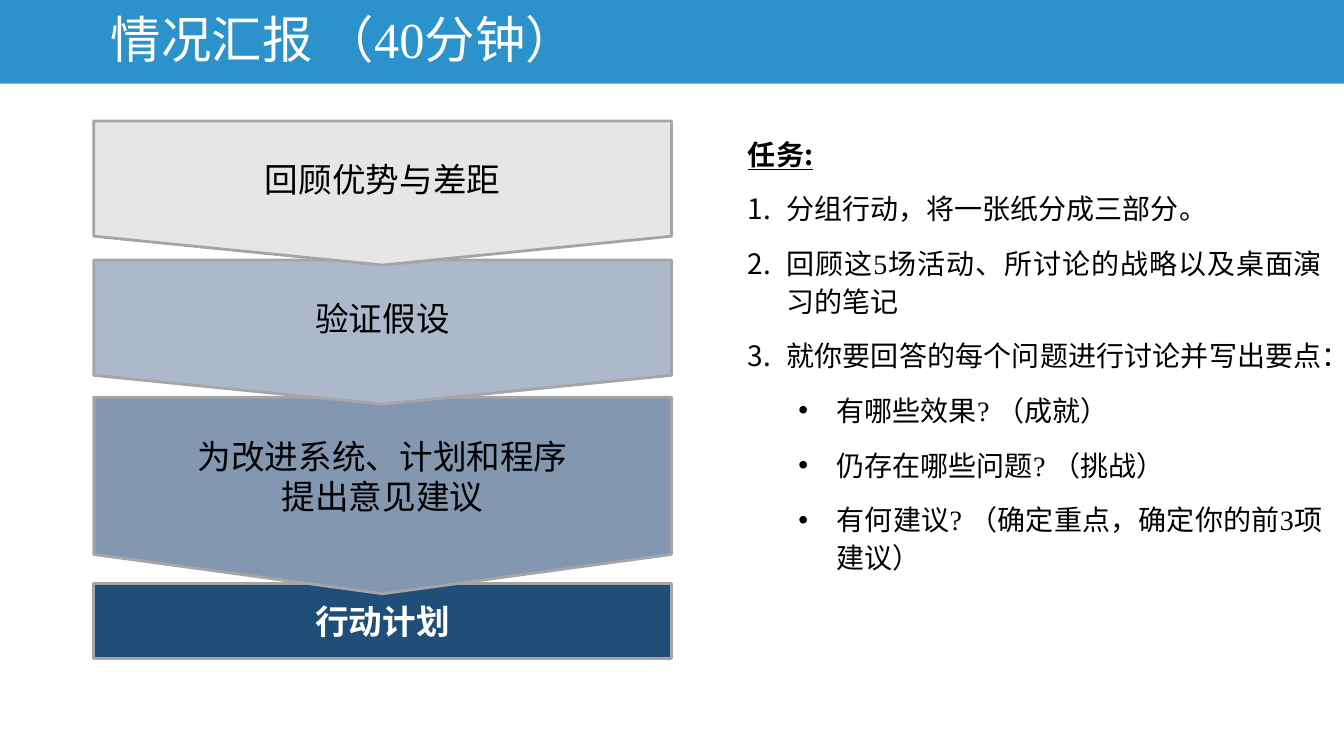
from lxml import etree
from pptx import Presentation
from pptx import util as u
from pptx.dml.color import RGBColor
from pptx.enum import shapes, text
from pptx.oxml import ns

COLORS = {
    "banner": "2B92CB", "outline": "A5A5A5", "white": "FFFFFF", "black": "000000",
    "review": "E7E6E6", "validate": "ADB9CA", "improve": "8497B0", "plan": "1F4E79",
}
SANS, SERIF = "Noto Sans CJK SC", "Times New Roman"
ALIGN = text.PP_ALIGN


def write(para, words, size=20, font=SERIF, color="black", bold=False,
          underline=False, align=ALIGN.LEFT, spacing=None, after=None):
    para.text = words
    para.alignment = align
    para.line_spacing = spacing
    para.space_after = after
    for span in para.runs:
        span.font.size = u.Pt(size)
        span.font.name = font
        span.font.bold = bold
        span.font.underline = underline
        span.font.color.rgb = RGBColor.from_string(COLORS[color])
        east_asian = etree.SubElement(span.font._element, ns.qn("a:ea"))
        east_asian.set("typeface", SANS)


def add_block(parent, kind, left, top, width, height, fill):
    block = parent.add_shape(kind, u.Inches(left), u.Inches(top),
                             u.Inches(width), u.Inches(height))
    block.shadow.inherit = False
    block.fill.solid()
    block.fill.fore_color.rgb = RGBColor.from_string(COLORS[fill])
    block.text_frame.word_wrap = True
    block.text_frame.vertical_anchor = text.MSO_ANCHOR.MIDDLE
    return block


deck = Presentation()
deck.slide_width, deck.slide_height = u.Inches(13.33), u.Inches(7.5)
page = deck.slides.add_slide(deck.slide_layouts[6])

# Steps, stacked from the bottom so that each arrow overlaps the next step
RECT = shapes.MSO_SHAPE.RECTANGLE
ARROW = shapes.MSO_SHAPE.FLOWCHART_OFFPAGE_CONNECTOR
steps = [
    (RECT, 5.79, 0.74, "plan", "行动计划", dict(font=SANS, color="white", bold=True)),
    (ARROW, 3.94, 1.95, "improve", "为改进系统、计划和程序\v提出意见建议", {}),
    (ARROW, 2.58, 1.43, "validate", "验证假设", {}),
    (ARROW, 1.2, 1.43, "review", "回顾优势与差距", {}),
]
stack = page.shapes.add_group_shape()
for kind, top, height, fill, words, style in steps:
    step = add_block(stack.shapes, kind, 0.93, top, 5.73, height, fill)
    step.line.color.rgb = RGBColor.from_string(COLORS["outline"])
    step.line.width = u.Pt(2)
    write(step.text_frame.paragraphs[0], words, size=24, align=ALIGN.CENTER, **style)

# Title banner
banner = add_block(page.shapes, RECT, 0, 0, 13.33, 0.83, "banner")
banner.line.fill.background()
banner.text_frame.margin_left = u.Inches(1.1)
write(banner.text_frame.paragraphs[0], "情况汇报 （40分钟）", size=36, color="white",
      spacing=0.9)

# Tasks: list level, wording (None is the heading)
tasks = [
    (None, "任务:"),
    (0, "分组行动，将一张纸分成三部分。"),
    (0, "回顾这5场活动、所讨论的战略以及桌面演习的笔记"),
    (0, "就你要回答的每个问题进行讨论并写出要点："),
    (1, "有哪些效果? （成就）"),
    (1, "仍存在哪些问题? （挑战）"),
    (1, "有何建议? （确定重点，确定你的前3项建议）"),
]
markers = [(SANS, "a:buAutoNum", "type", "arabicPeriod"),
           ("Arial", "a:buChar", "char", "•")]
box = page.shapes.add_textbox(u.Inches(7.32), u.Inches(1.27), u.Inches(5.89), u.Inches(5.34))
box.text_frame.word_wrap = True
for index, (level, words) in enumerate(tasks):
    para = box.text_frame.add_paragraph() if index else box.text_frame.paragraphs[0]
    heading = level is None
    write(para, words, font=SANS if heading else SERIF, bold=heading, underline=heading,
          align=ALIGN.JUSTIFY, spacing=u.Pt(27), after=u.Pt(12))
    if heading:
        continue
    para.level = level
    font, tag, key, value = markers[level]
    props = para._p.get_or_add_pPr()
    props.set("marL", str(u.Inches(0.38 + 0.5 * level)))
    props.set("indent", str(-u.Inches(0.38)))
    etree.SubElement(props, ns.qn("a:buFont")).set("typeface", font)
    etree.SubElement(props, ns.qn(tag)).set(key, value)

deck.save("out.pptx")
